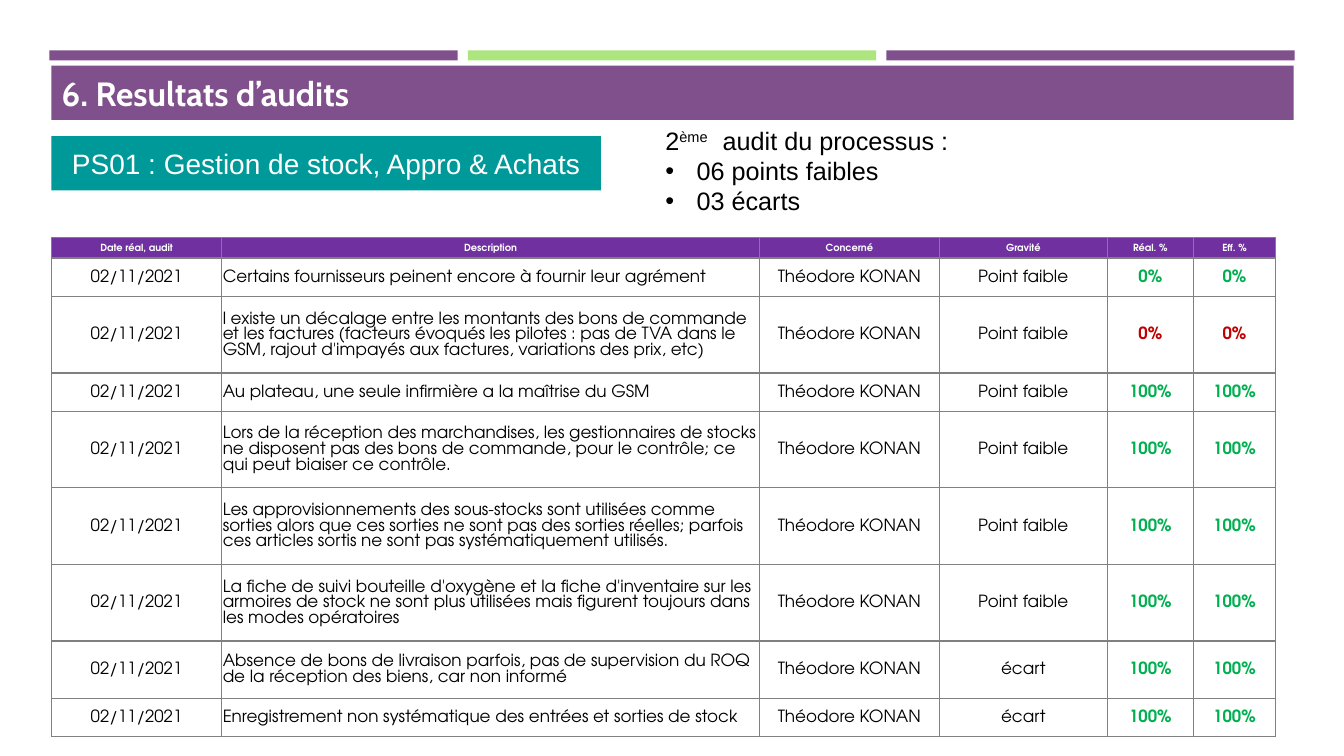
from pptx import Presentation
from pptx.dml.color import RGBColor
from pptx.enum.shapes import MSO_SHAPE
from pptx.enum.text import MSO_ANCHOR, MSO_AUTO_SIZE, PP_ALIGN
from pptx.oxml.ns import qn
from pptx.util import Inches, Pt
from lxml.etree import SubElement

COLORS = {
    "purple": "7F508B", "lime": "ADE67F", "teal": "009999", "header": "7030A0",
    "border": "808080", "green": "00B050", "red": "C00000",
    "white": "FFFFFF", "black": "000000",
}


def style_text(p, font, size, color, bold=False, align=PP_ALIGN.LEFT):
    p.alignment = align
    for r in p.runs:
        r.font.name = font
        r.font.size = Pt(size)
        r.font.bold = bold
        r.font.color.rgb = RGBColor.from_string(COLORS[color])


def add_block(x, y, w, h, color):
    sp = s.shapes.add_shape(MSO_SHAPE.RECTANGLE, Inches(x), Inches(y), Inches(w), Inches(h))
    sp.shadow.inherit = False
    sp.fill.solid()
    sp.fill.fore_color.rgb = RGBColor.from_string(COLORS[color])
    sp.line.fill.background()
    return sp


prs = Presentation()
prs.slide_width, prs.slide_height = Inches(13.33), Inches(7.5)
s = prs.slides.add_slide(prs.slide_layouts[5])

# Top bars
for i, color in enumerate(["purple", "lime", "purple"]):
    add_block(0.49 + i * 4.15, 0.5, 4.05, 0.1, color)

# Title band
title = s.shapes.title
title.left, title.top, title.width, title.height = Inches(0.51), Inches(0.65), Inches(12.32), Inches(0.54)
title.fill.solid()
title.fill.fore_color.rgb = RGBColor.from_string(COLORS["purple"])
tf = title.text_frame
tf.text = "6. Resultats d’audits"
tf.auto_size = MSO_AUTO_SIZE.NONE
tf.vertical_anchor = MSO_ANCHOR.MIDDLE
style_text(tf.paragraphs[0], "Cabin", 24, "white", True)

# Process label
label = add_block(0.51, 1.35, 5.45, 0.54, "teal")
tf = label.text_frame
tf.text = "PS01 : Gestion de stock, Appro & Achats"
tf.vertical_anchor = MSO_ANCHOR.MIDDLE
style_text(tf.paragraphs[0], "Arial", 20, "white", align=PP_ALIGN.CENTER)

# Audit summary
summary = s.shapes.add_textbox(Inches(6.5), Inches(1.19), Inches(4.92), Inches(1.01))
tf = summary.text_frame
tf.word_wrap = True
p = tf.paragraphs[0]
tabs = SubElement(p._p.get_or_add_pPr(), qn("a:tabLst"))
SubElement(tabs, qn("a:tab"), pos=str(Inches(0.5)), algn="l")
for text in ["2", "ème", "\t audit du processus :"]:
    p.add_run().text = text
style_text(p, "Arial", 18, "black")
p.runs[1].font._element.set("baseline", "30000")
for text in ["06 points faibles", "03 écarts"]:
    p = tf.add_paragraph()
    p.text = text
    pPr = p._p.get_or_add_pPr()
    pPr.set("marL", str(Inches(0.31)))
    pPr.set("indent", str(-Inches(0.31)))
    SubElement(pPr, qn("a:buFont"), typeface="Arial")
    SubElement(pPr, qn("a:buChar"), char="•")
    style_text(p, "Arial", 18, "black")

# Audit findings: description, severity, rate, rate colour
headers = ["Date réal, audit", "Description", "Concerné", "Gravité", "Réal. %", "Eff. %"]
findings = [
    ("Certains fournisseurs peinent encore à fournir leur agrément", "Point faible", "0%", "green"),
    ("l existe un décalage entre les montants des bons de commande et les factures "
     "(facteurs évoqués les pilotes : pas de TVA dans le GSM, rajout d'impayés aux factures, "
     "variations des prix, etc)", "Point faible", "0%", "red"),
    ("Au plateau, une seule infirmière a la maîtrise du GSM", "Point faible", "100%", "green"),
    ("Lors de la réception des marchandises, les gestionnaires de stocks ne disposent pas "
     "des bons de commande, pour le contrôle; ce qui peut biaiser ce contrôle.",
     "Point faible", "100%", "green"),
    ("Les approvisionnements des sous-stocks sont utilisées comme sorties alors que ces sorties "
     "ne sont pas des sorties réelles; parfois ces articles sortis ne sont pas "
     "systématiquement utilisés.", "Point faible", "100%", "green"),
    ("La fiche de suivi bouteille d'oxygène et la fiche d'inventaire sur les armoires de stock "
     "ne sont plus utilisées mais figurent toujours dans les modes opératoires",
     "Point faible", "100%", "green"),
    ("Absence de bons de livraison parfois, pas de supervision du ROQ de la réception des biens, "
     "car non informé", "écart", "100%", "green"),
    ("Enregistrement non systématique des entrées et sorties de stock", "écart", "100%", "green"),
]
rows = [headers]
for description, severity, rate, _ in findings:
    rows.append(["02/11/2021", description, "Théodore KONAN", severity, rate, rate])

# Table
col_widths = [1.69, 5.33, 1.79, 1.66, 0.86, 0.81]
row_heights = [0.2, 0.38, 0.76, 0.38, 0.76, 0.76, 0.76, 0.57, 0.38]
table = s.shapes.add_table(len(rows), len(headers), Inches(0.51), Inches(2.36),
                           Inches(12.14), Inches(4.94)).table
table.first_row = table.horz_banding = False
for column, width in zip(table.columns, col_widths):
    column.width = Inches(width)
for row, height in zip(table.rows, row_heights):
    row.height = Inches(height)

for i, row in enumerate(rows):
    for j, text in enumerate(row):
        cell = table.cell(i, j)
        cell.margin_left = cell.margin_top = cell.margin_right = Inches(0.01)
        cell.margin_bottom = 0
        cell.vertical_anchor = MSO_ANCHOR.MIDDLE

        # Thin inner verticals, 1 pt everywhere else
        widths = {"L": 1 if j < 2 else 0.5, "R": 1 if j in (0, 5) else 0.5, "T": 1, "B": 1}
        for side, width in widths.items():
            ln = SubElement(cell._tc.get_or_add_tcPr(), qn("a:ln" + side), w=str(Pt(width)))
            SubElement(SubElement(ln, qn("a:solidFill")), qn("a:srgbClr"), val=COLORS["border"])

        cell.text_frame.text = text
        p = cell.text_frame.paragraphs[0]
        if i == 0:
            cell.fill.solid()
            cell.fill.fore_color.rgb = RGBColor.from_string(COLORS["header"])
            style_text(p, "TeX Gyre Adventor", 7, "white", True, PP_ALIGN.CENTER)
        else:
            cell.fill.background()
            is_rate = j >= 4
            style_text(p, "TeX Gyre Adventor", 12, findings[i - 1][3] if is_rate else "black",
                       is_rate, PP_ALIGN.LEFT if j == 1 else PP_ALIGN.CENTER)

prs.save("out.pptx")
